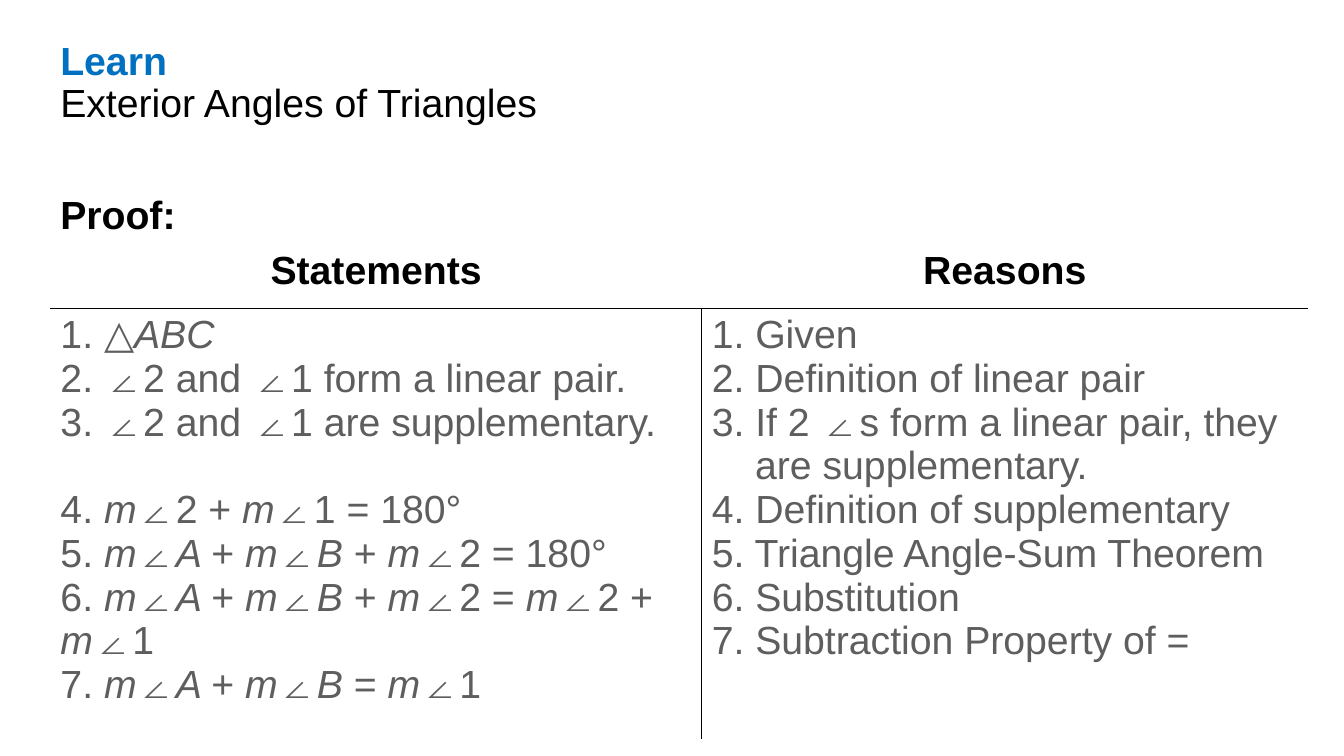
from lxml import etree
from pptx import Presentation
from pptx import util as u
from pptx.dml.color import RGBColor
from pptx.enum import text
from pptx.oxml import ns

BLUE = RGBColor(0x00, 0x70, 0xC0)
BLACK = RGBColor(0x00, 0x00, 0x00)
GRAY = RGBColor(0x5E, 0x5E, 0x5E)

WIDTH, HEIGHT = u.Inches(13.33), u.Inches(7.5)
LEFT = u.Inches(0.5)
COLUMNS = [u.Inches(6.46), u.Inches(6.01)]
ROWS = [u.Inches(0.64), u.Inches(4.01)]
LINE_HEIGHT = u.Pt(31.3)
HANGING = u.Inches(0.43)

STATEMENTS = [
    "1. △*ABC*",
    "2. ∠2 and ∠1 form a linear pair.",
    "3. ∠2 and ∠1 are supplementary.",
    "4. *m*∠2 + *m*∠1 = 180°",
    "5. *m*∠*A *+ *m*∠*B *+ *m*∠2 = 180°",
    "6. *m*∠*A *+ *m*∠*B *+ *m*∠2 = *m*∠2 + *m*∠1",
    "7. *m*∠*A *+ *m*∠*B *= *m*∠1",
]
REASONS = [
    "1. Given",
    "2. Definition of linear pair",
    "3. If 2 ∠s form a linear pair, they are supplementary.",
    "4. Definition of supplementary",
    "5. Triangle Angle-Sum Theorem",
    "6. Substitution",
    "7. Subtraction Property of =",
]


def write(paragraph, words, color=BLACK, bold=False, align=None):
    """Add words to a paragraph; parts between asterisks are italic."""
    paragraph.alignment = align
    for index, part in enumerate(words.split("*")):
        if part:
            run = paragraph.add_run()
            run.text = part
            run.font.name = "Arial"
            run.font.size = u.Pt(28)
            run.font.bold = bold
            run.font.italic = index % 2 == 1
            run.font.color.rgb = color


def write_lines(frame, lines, **style):
    for index, line in enumerate(lines):
        paragraph = frame.add_paragraph() if index else frame.paragraphs[0]
        write(paragraph, line, **style)


def add_text_box(slide, top, width, height):
    frame = slide.shapes.add_textbox(LEFT, top, width, height).text_frame
    frame.word_wrap = True
    return frame


def style_cell(cell, sides):
    """Rule the given sides (in the order L, R, T, B) and clear the fill."""
    properties = cell._tc.get_or_add_tcPr()
    for side in "LRTB":
        line = etree.SubElement(properties, ns.qn(f"a:ln{side}"), w=str(u.Pt(1)))
        if side in sides:
            fill = etree.SubElement(line, ns.qn("a:solidFill"))
            etree.SubElement(fill, ns.qn("a:srgbClr"), val=str(BLACK))
        else:
            etree.SubElement(line, ns.qn("a:noFill"))
    cell.fill.background()


def add_proof_table(slide):
    frame = slide.shapes.add_table(2, 2, LEFT, u.Inches(2.42), sum(COLUMNS), sum(ROWS))
    table = frame.table
    table.first_row = table.horz_banding = False
    for row, height in zip(table.rows, ROWS):
        row.height = height
    contents = [("Statements", STATEMENTS, "RT"), ("Reasons", REASONS, "LT")]
    for index, (heading, lines, sides) in enumerate(contents):
        table.columns[index].width = COLUMNS[index]
        header, body = table.cell(0, index), table.cell(1, index)
        style_cell(header, "B")
        style_cell(body, sides)
        write_lines(header.text_frame, [heading], bold=True, align=text.PP_ALIGN.CENTER)
        write_lines(body.text_frame, lines, color=GRAY)
    # The fourth statement lines up with the fourth reason.
    table.cell(1, 0).text_frame.paragraphs[3].space_before = LINE_HEIGHT
    wrapped_reason = table.cell(1, 1).text_frame.paragraphs[2]._p.get_or_add_pPr()
    wrapped_reason.set("marL", str(HANGING))
    wrapped_reason.set("indent", str(-HANGING))


def main():
    presentation = Presentation()
    presentation.slide_width, presentation.slide_height = WIDTH, HEIGHT
    slide = presentation.slides.add_slide(presentation.slide_layouts[6])

    title = add_text_box(slide, u.Inches(0.36), u.Inches(7.6), u.Inches(1.41)).paragraphs[0]
    title.line_spacing = 0.9
    write(title, "Learn", color=BLUE, bold=True)
    title.add_line_break()
    write(title, "Exterior Angles of Triangles")

    add_proof_table(slide)
    proof = add_text_box(slide, u.Inches(1.84), u.Inches(10.21), u.Inches(0.54))
    write_lines(proof, ["Proof:"], bold=True)
    presentation.save("out.pptx")


if __name__ == "__main__":
    main()
